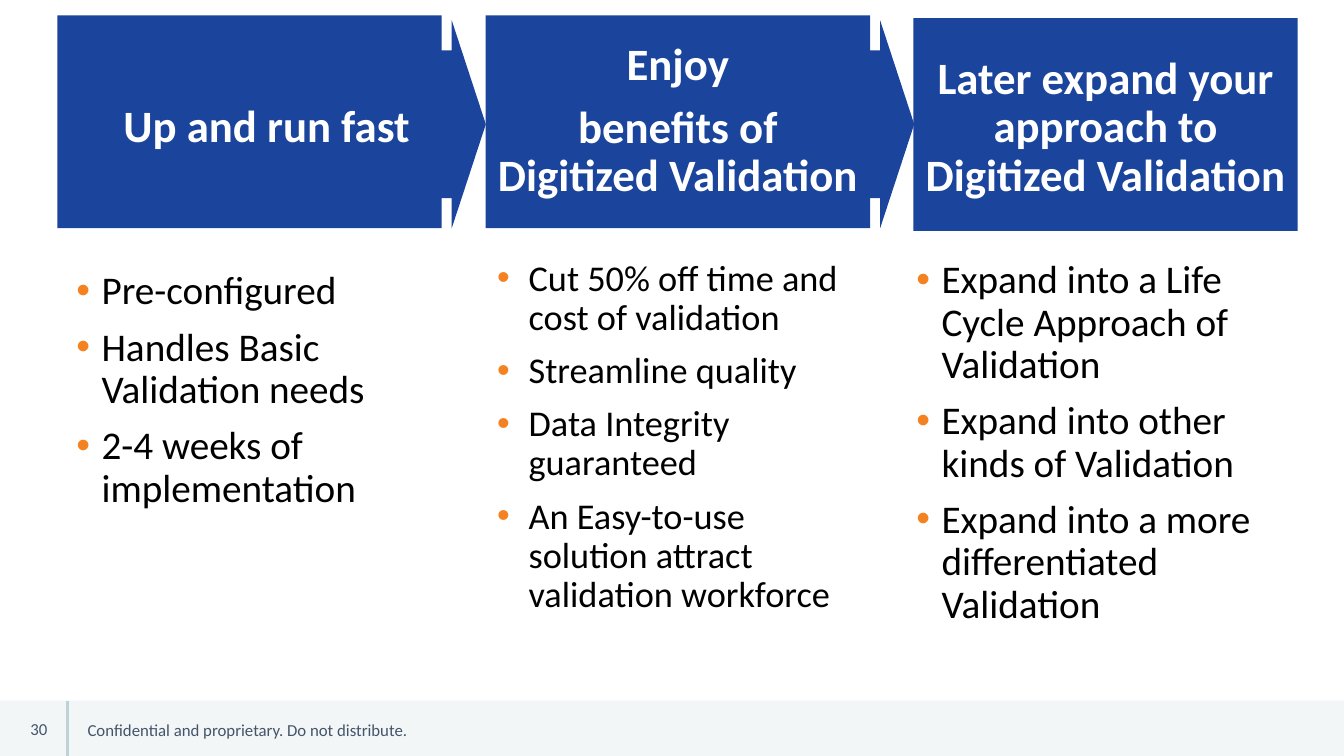
from dataclasses import dataclass

import pptx
import pptx.dml.color
import pptx.enum.shapes
import pptx.enum.text
import pptx.oxml.ns
import pptx.util
from lxml import etree

Pt = pptx.util.Pt
Shape = pptx.enum.shapes.MSO_SHAPE
Align = pptx.enum.text.PP_ALIGN
Anchor = pptx.enum.text.MSO_ANCHOR


@dataclass(frozen=True)
class Theme:
    font: str = "Calibri"
    band: str = "F2F6F7"
    divider: str = "BDD1D9"
    footer: str = "44546A"
    stage: str = "1B449C"
    heading: str = "FFFFFF"
    body: str = "000000"
    bullet: str = "F58220"
    heading_size: float = 32
    body_size: float = 28
    dense_size: float = 25.9
    footer_size: float = 12


@dataclass(frozen=True)
class Stage:
    """One column; boxes are (left, top, width, height) in points."""
    card: tuple
    heading_box: tuple
    heading: tuple
    points_box: tuple
    points: tuple
    size: float = Theme.body_size
    indent: float = 18


THEME = Theme()
CARD_SIZE = (274.5, 152)
ARROWS = ((309, 14.5, 38, 148.5), (615, 14.5, 38, 148.5))
STAGES = (
    Stage((41, 11, *CARD_SIZE), (58.5, 59, 264, 65), ("Up and run fast",),
          (47.5, 190, 277, 297.5),
          ("Pre-configured", "Handles Basic Validation needs",
           "2-4 weeks of implementation")),
    Stage((347, 11, *CARD_SIZE), (347, 54.5, 274.5, 65),
          ("Enjoy", "benefits of Digitized Validation"),
          (348, 182, 264, 305.5),
          ("Cut 50% off time and cost of validation", "Streamline quality",
           "Data Integrity guaranteed",
           "An Easy-to-use solution attract validation workforce"),
          THEME.dense_size, 22.5),
    Stage((652.5, 13, *CARD_SIZE), (652.5, 59, 274.5, 65),
          ("Later expand your approach to Digitized Validation",),
          (647.5, 182, 264, 305.5),
          ("Expand into a Life Cycle Approach of Validation",
           "Expand into other kinds of Validation",
           "Expand into a more differentiated Validation")),
)


def rgb(code):
    return pptx.dml.color.RGBColor.from_string(code)


def add_block(slide, kind, box, color):
    block = slide.shapes.add_shape(kind, *map(Pt, box))
    block.shadow.inherit = False
    block.fill.solid()
    block.fill.fore_color.rgb = rgb(color)
    block.line.fill.background()
    return block


def add_arrow(slide, box):
    arrow = add_block(slide, Shape.RIGHT_ARROW, box, THEME.stage)
    arrow.adjustments[0] = 0.71
    arrow.adjustments[1] = 0.64


def add_divider(slide, x, top, bottom):
    divider = slide.shapes.add_connector(
        pptx.enum.shapes.MSO_CONNECTOR.STRAIGHT, Pt(x), Pt(top), Pt(x), Pt(bottom))
    divider.line.color.rgb = rgb(THEME.divider)
    divider.line.width = Pt(2.25)
    etree.SubElement(divider._element.spPr, pptx.oxml.ns.qn("a:effectLst"))


def add_bullet(paragraph, indent):
    qn = pptx.oxml.ns.qn
    properties = paragraph._p.get_or_add_pPr()
    properties.set("marL", str(Pt(indent)))
    properties.set("indent", str(-Pt(indent)))
    color = etree.SubElement(properties, qn("a:buClr"))
    etree.SubElement(color, qn("a:srgbClr"), val=THEME.bullet)
    etree.SubElement(properties, qn("a:buFont"), typeface="Arial")
    etree.SubElement(properties, qn("a:buChar"), char="•")


def add_text(slide, box, lines, size, color, align=Align.LEFT,
             anchor=Anchor.MIDDLE, bold=False, spacing=0.9, indent=0):
    """Write one paragraph per line; an indent makes the lines bulleted."""
    frame = slide.shapes.add_textbox(*map(Pt, box)).text_frame
    frame.word_wrap = True
    frame.vertical_anchor = anchor
    for index, line in enumerate(lines):
        paragraph = frame.add_paragraph() if index else frame.paragraphs[0]
        paragraph.text = line
        paragraph.alignment = align
        paragraph.line_spacing = spacing
        paragraph.space_before = Pt(10 if index else 0)
        if indent:
            add_bullet(paragraph, indent)
        paragraph.font.name = THEME.font
        paragraph.font.size = Pt(size)
        paragraph.font.bold = bold
        paragraph.font.color.rgb = rgb(color)


def add_footer(slide):
    add_block(slide, Shape.RECTANGLE, (0, 500.5, 960, 39.5), THEME.band)
    add_text(slide, (55.5, 502, 263.5, 38),
             ("Confidential and proprietary. Do not distribute.",),
             THEME.footer_size, THEME.footer, spacing=1)
    add_divider(slide, 48, 500.5, 540)
    add_text(slide, (4, 500.5, 37, 39.5), ("30",), THEME.footer_size,
             THEME.footer, Align.RIGHT, spacing=1)


def add_stage(slide, stage):
    add_block(slide, Shape.RECTANGLE, stage.card, THEME.stage)
    add_text(slide, stage.heading_box, stage.heading, THEME.heading_size,
             THEME.heading, Align.CENTER, bold=True)
    add_text(slide, stage.points_box, stage.points, stage.size, THEME.body,
             anchor=Anchor.TOP, indent=stage.indent)


def main():
    deck = pptx.Presentation()
    deck.slide_width, deck.slide_height = Pt(960), Pt(540)
    slide = deck.slides.add_slide(deck.slide_layouts[6])
    add_footer(slide)
    for box in ARROWS:
        add_arrow(slide, box)
    for stage in STAGES:
        add_stage(slide, stage)
    deck.save("out.pptx")


if __name__ == "__main__":
    main()
